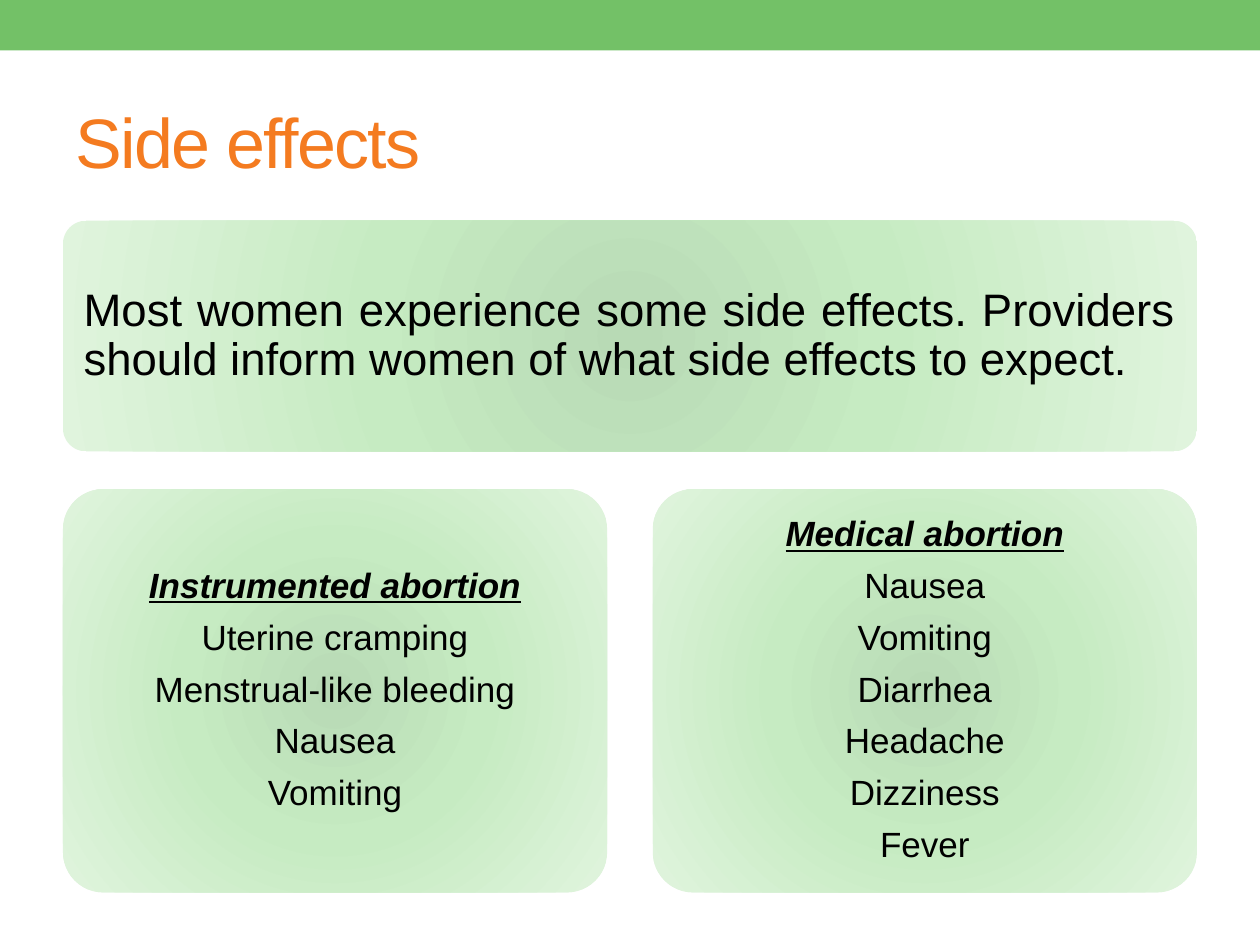
from dataclasses import dataclass

import lxml.etree
import pptx
import pptx.dml.color
import pptx.enum.shapes
import pptx.enum.text
import pptx.oxml.ns
import pptx.util

Cm = pptx.util.Cm
Pt = pptx.util.Pt
RGB = pptx.dml.color.RGBColor.from_string
SHAPES = pptx.enum.shapes.MSO_SHAPE
ALIGN = pptx.enum.text.PP_ALIGN
MIDDLE = pptx.enum.text.MSO_ANCHOR.MIDDLE
qn = pptx.oxml.ns.qn


@dataclass(frozen=True)
class Theme:
    font: str = "Arial"
    band: str = "73C167"
    title: str = "F47B20"
    text: str = "000000"
    panel_stops: tuple = ((0, "B8DAB5"), (45, "C6EBC2"), (100, "E0F4DD"))
    title_size: int = 40
    message_size: int = 26
    list_size: int = 20
    line_spacing: float = 0.9
    space_after: float = 0.4  # share of the type size


@dataclass(frozen=True)
class Box:
    """A region of the slide, in centimetres."""
    left: float
    top: float
    width: float
    height: float

    def emu(self):
        return [Cm(v) for v in (self.left, self.top, self.width, self.height)]


THEME = Theme()
HEADING = {"bold": True, "italic": True, "underline": True}
MESSAGE = ("Most women experience some side effects. "
           "Providers should inform women of what side effects to expect.")
METHODS = [
    ("Instrumented abortion",
     ["Uterine cramping", "Menstrual-like bleeding", "Nausea", "Vomiting"]),
    ("Medical abortion",
     ["Nausea", "Vomiting", "Diarrhea", "Headache", "Dizziness", "Fever"]),
]


def apply(target, formats):
    for name, value in formats.items():
        setattr(target, name, value)


def add_words(paragraph, words, size, color, formats=None):
    run = paragraph.add_run()
    run.text = words
    apply(run.font, {"name": THEME.font, "size": Pt(size), **(formats or {})})
    run.font.color.rgb = RGB(color)
    return run


def fill_radial(shape, stops):
    """Fill with a gradient that spreads in circles from the centre."""
    shape.fill.gradient()
    gradient = shape._element.spPr.find(qn("a:gradFill"))
    for child in list(gradient):
        gradient.remove(child)
    stop_list = lxml.etree.SubElement(gradient, qn("a:gsLst"))
    for percent, color in stops:
        stop = lxml.etree.SubElement(stop_list, qn("a:gs"), pos=str(percent * 1000))
        lxml.etree.SubElement(stop, qn("a:srgbClr"), val=color)
    circle = lxml.etree.SubElement(gradient, qn("a:path"), path="circle")
    lxml.etree.SubElement(circle, qn("a:fillToRect"),
                          dict.fromkeys("ltrb", "100000"))


def add_band(slide, box):
    band = slide.shapes.add_shape(SHAPES.RECTANGLE, *box.emu())
    band.shadow.inherit = False
    band.fill.solid()
    band.fill.fore_color.rgb = RGB(THEME.band)
    band.line.fill.background()


def add_title(slide, box, words):
    frame = slide.shapes.add_textbox(*box.emu()).text_frame
    apply(frame, {"word_wrap": True, "vertical_anchor": MIDDLE})
    title = add_words(frame.paragraphs[0], words, THEME.title_size, THEME.title)
    title.font._element.set("spc", "-100")


def add_panel(slide, box, lines, size, inset, alignment):
    """Rounded panel; lines holds pairs of words and font formats."""
    panel = slide.shapes.add_shape(SHAPES.ROUNDED_RECTANGLE, *box.emu())
    panel.adjustments[0] = 0.1
    panel.shadow.inherit = False
    panel.line.fill.background()
    fill_radial(panel, THEME.panel_stops)
    frame = panel.text_frame
    apply(frame, {"word_wrap": True, "vertical_anchor": MIDDLE})
    apply(frame, {f"margin_{side}": Cm(inset)
                  for side in ("left", "top", "right", "bottom")})
    for index, (words, formats) in enumerate(lines):
        paragraph = frame.add_paragraph() if index else frame.paragraphs[0]
        apply(paragraph, {"alignment": alignment,
                          "line_spacing": THEME.line_spacing,
                          "space_after": Pt(size * THEME.space_after)})
        add_words(paragraph, words, size, THEME.text, formats)


def add_side_effects(slide, box):
    """Message panel across the top, one list panel per method below."""
    message_height, row_gap, column_gap = 4.65, 0.76, 0.92
    add_panel(slide, Box(box.left, box.top, box.width, message_height),
              [(MESSAGE, {})], THEME.message_size, 0.28, ALIGN.JUSTIFY)
    offset = message_height + row_gap
    width = (box.width - column_gap * (len(METHODS) - 1)) / len(METHODS)
    for column, (method, effects) in enumerate(METHODS):
        left = box.left + column * (width + column_gap)
        lines = [(method, HEADING)] + [(effect, {}) for effect in effects]
        add_panel(slide, Box(left, box.top + offset, width, box.height - offset),
                  lines, THEME.list_size, 0.2, ALIGN.CENTER)


def main():
    deck = pptx.Presentation()
    apply(deck, {"slide_width": Cm(25.4), "slide_height": Cm(19.05)})
    slide = deck.slides.add_slide(deck.slide_layouts[6])
    add_band(slide, Box(0, 0, 25.4, 1.02))
    add_title(slide, Box(1.27, 1.47, 22.86, 2.74), "Side effects")
    add_side_effects(slide, Box(1.27, 4.45, 22.86, 13.54))
    deck.save("out.pptx")


if __name__ == "__main__":
    main()
